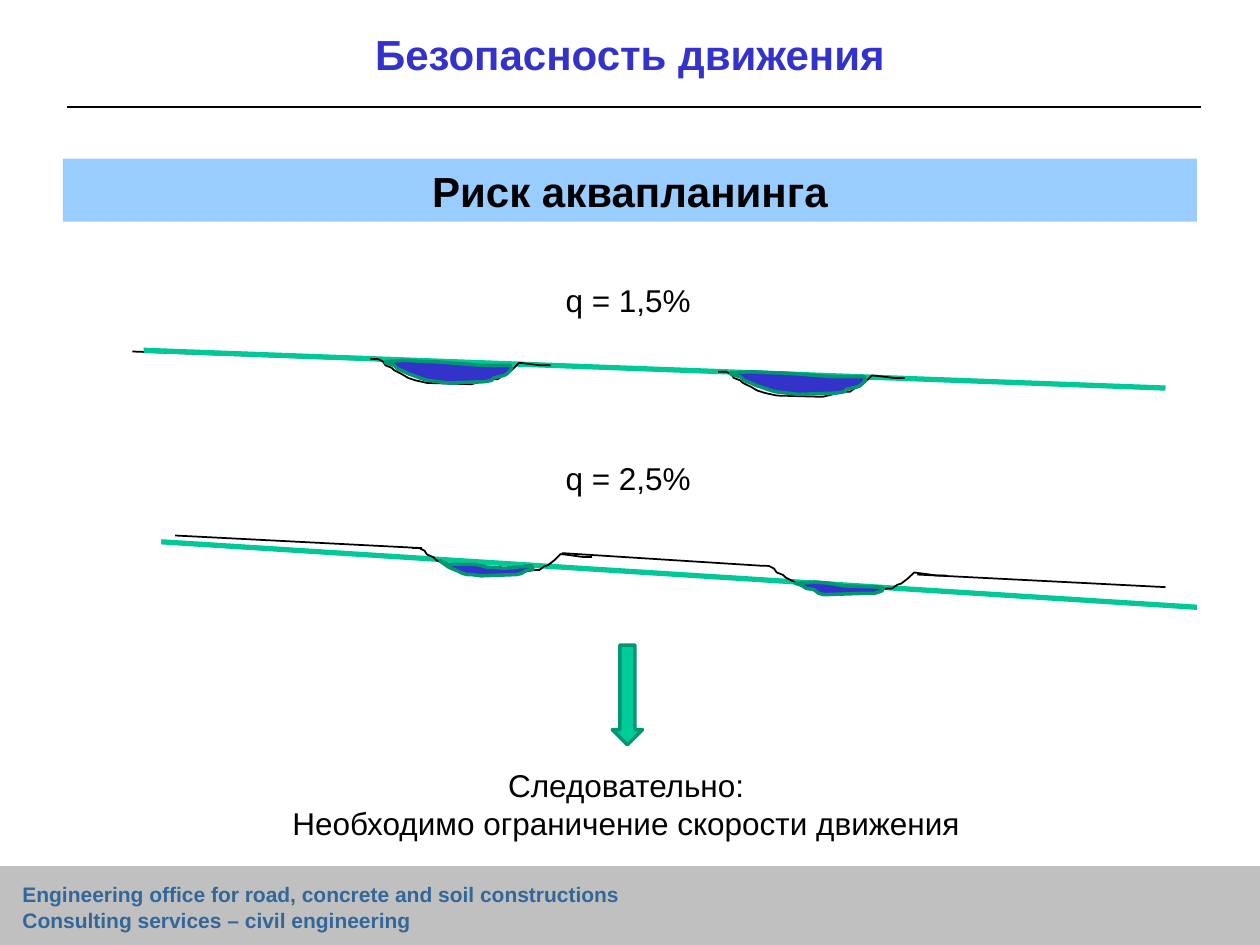
import pptx
import pptx.util
import pptx.dml.color
import pptx.enum.shapes
import pptx.enum.text
import pptx.oxml
import pptx.oxml.ns

HUES = {
    "ink": "000000", "title": "3333CC", "banner": "99CCFF", "bar": "C0C0C0",
    "firm": "336699", "road": "00C896", "arrow": "00CC99", "edge": "009771",
    "water": "3333CC",
}
HUES = {name: pptx.dml.color.RGBColor.from_string(hue) for name, hue in HUES.items()}
KIND = pptx.enum.shapes.MSO_SHAPE
ALIGN = pptx.enum.text.PP_ALIGN
ANCHOR = pptx.enum.text.MSO_ANCHOR

deck = pptx.Presentation()
deck.slide_width = pptx.util.Inches(10)
deck.slide_height = pptx.util.Inches(7.5)
slide = deck.slides.add_slide(deck.slide_layouts[6])
shapes = slide.shapes
CELL = deck.slide_width // 1000  # the grid has 1000 columns and 750 rows


def write(shape, lines, size, hue, bold=False, align=ALIGN.CENTER, anchor=ANCHOR.TOP):
    frame = shape.text_frame
    frame.word_wrap = True
    frame.vertical_anchor = anchor
    for i, line in enumerate(lines):
        para = frame.paragraphs[0] if i == 0 else frame.add_paragraph()
        para.alignment = align
        run = para.add_run()
        run.text = line
        run.font.name = "Arial"
        run.font.size = pptx.util.Pt(size)
        run.font.bold = bold
        run.font.color.rgb = HUES[hue]


def draw(x1, y1, x2, y2, hue, width):
    """Add a straight line without a shadow, in grid cells."""
    line = shapes.add_connector(
        pptx.enum.shapes.MSO_CONNECTOR.STRAIGHT, *[v * CELL for v in (x1, y1, x2, y2)])
    line.line.color.rgb = HUES[hue]
    line.line.width = pptx.util.Pt(width)
    line._element.spPr.append(pptx.oxml.parse_xml(
        "<a:effectLst %s/>" % pptx.oxml.ns.nsdecls("a")))


# Filled shapes: footer bar, banner and arrow
blocks = {}
for name, kind, box, fill, edge, width in [
    ("bar", KIND.RECTANGLE, (0, 687.5, 1000, 62.5), "bar", "bar", 0.75),
    ("banner", KIND.RECTANGLE, (50, 126, 900, 50), "banner", None, 0),
    ("arrow", KIND.DOWN_ARROW, (486, 512, 24, 79), "arrow", "edge", 2),
]:
    block = shapes.add_shape(kind, *[int(v * CELL) for v in box])
    block.shadow.inherit = False
    block.fill.solid()
    block.fill.fore_color.rgb = HUES[fill]
    if edge:
        block.line.color.rgb = HUES[edge]
        block.line.width = pptx.util.Pt(width)
    else:
        block.line.fill.background()
    blocks[name] = block

# Texts
write(blocks["banner"], ["Риск аквапланинга"], 24, "ink", True, anchor=ANCHOR.MIDDLE)
for box, lines, size, hue, bold, align, anchor in [
    ((0, 0, 1000, 85), ["Безопасность движения"], 24, "title", True,
     ALIGN.CENTER, ANCHOR.MIDDLE),
    ((8, 695, 634, 51), ["Engineering office for road, concrete and soil constructions",
                         "Consulting services – civil engineering"],
     12, "firm", True, ALIGN.LEFT, ANCHOR.TOP),
    ((219, 218, 559, 40), ["q = 1,5%"], 18, "ink", False, ALIGN.CENTER, ANCHOR.TOP),
    ((219, 359, 559, 40), ["q = 2,5%"], 18, "ink", False, ALIGN.CENTER, ANCHOR.TOP),
    ((119, 603, 756, 71), ["Следовательно:", "Необходимо ограничение скорости движения"],
     18, "ink", False, ALIGN.CENTER, ANCHOR.TOP),
]:
    write(shapes.add_textbox(*[v * CELL for v in box]), lines, size, hue, bold, align, anchor)

# Straight lines: title rule, road surfaces and design slopes
for line in [
    (53, 85, 953, 85, "ink", 1.5),
    (105, 279, 302, 286, "ink", 1),
    (412, 288, 570, 295, "ink", 1),
    (695, 299, 892, 306, "ink", 1),
    (114, 278, 925, 308, "road", 3),
    (128, 430, 950, 482, "road", 3),
    (139, 425, 335, 435, "ink", 1),
    (446, 439, 604, 449, "ink", 1),
    (728, 456, 925, 466, "ink", 1),
]:
    draw(*line)

# Outlines as offsets from their first point
RUT = [(0, 0), (6, 0), (10, 2), (12, 5), (17, 7), (19, 9), (25, 12), (30, 15), (33, 16),
       (36, 17), (45, 19), (80, 20), (88, 18), (91, 17), (98, 16), (101, 16), (105, 13),
       (108, 12), (113, 8), (114, 7), (118, 3), (127, 4), (135, 5), (143, 5)]
POOL = [(0, 0), (0, 1), (7, 3), (10, 6), (15, 8), (19, 10), (22, 11), (30, 14), (34, 15),
        (50, 17), (78, 16), (84, 15), (86, 13), (94, 11), (96, 10), (98, 8), (100, 6),
        (99, 3), (76, 3), (52, 1), (38, 0), (34, 0), (15, -1)]
LEFT = [(0, 0), (7, 5), (9, 6), (14, 8), (18, 10), (22, 11), (25, 11), (33, 12), (61, 11),
        (65, 10), (68, 8), (72, 7), (74, 7), (73, 4), (52, 6), (37, 5), (29, 3), (7, 3)]
RIGHT = [(0, 0), (4, 1), (6, 2), (9, 4), (15, 5), (19, 8), (23, 9), (53, 8), (63, 8),
         (69, 6), (70, 4), (68, 3), (39, 2), (28, 0), (17, -1)]

# Ruts are open black lines, water is closed and filled
for trace, x, y, scale, tilt, wet in [
    (RUT, 294, 285, 1, 0, False),
    (RUT, 570, 295, 1.035, 0, False),
    (RUT, 327, 435, 1, 0.015, False),
    (RUT, 604, 449, 1.03, 0.02, False),
    (POOL, 306, 287, 1, 0, True),
    (POOL, 580, 296, 1.07, 0, True),
    (LEFT, 349, 445, 1, 0, True),
    (RIGHT, 631, 463, 1, 0, True),
]:
    spots = [(round((x + dx * scale) * CELL), round((y + dy + dx * tilt) * CELL))
             for dx, dy in trace]
    pen = shapes.build_freeform(*spots[0], scale=1.0)
    pen.add_line_segments(spots[1:], close=wet)
    form = pen.convert_to_shape()
    form.shadow.inherit = False
    if wet:
        form.fill.solid()
        form.fill.fore_color.rgb = HUES["water"]
    else:
        form.fill.background()
    form.line.color.rgb = HUES["edge" if wet else "ink"]
    form.line.width = pptx.util.Pt(2 if wet else 1)

deck.save("out.pptx")
